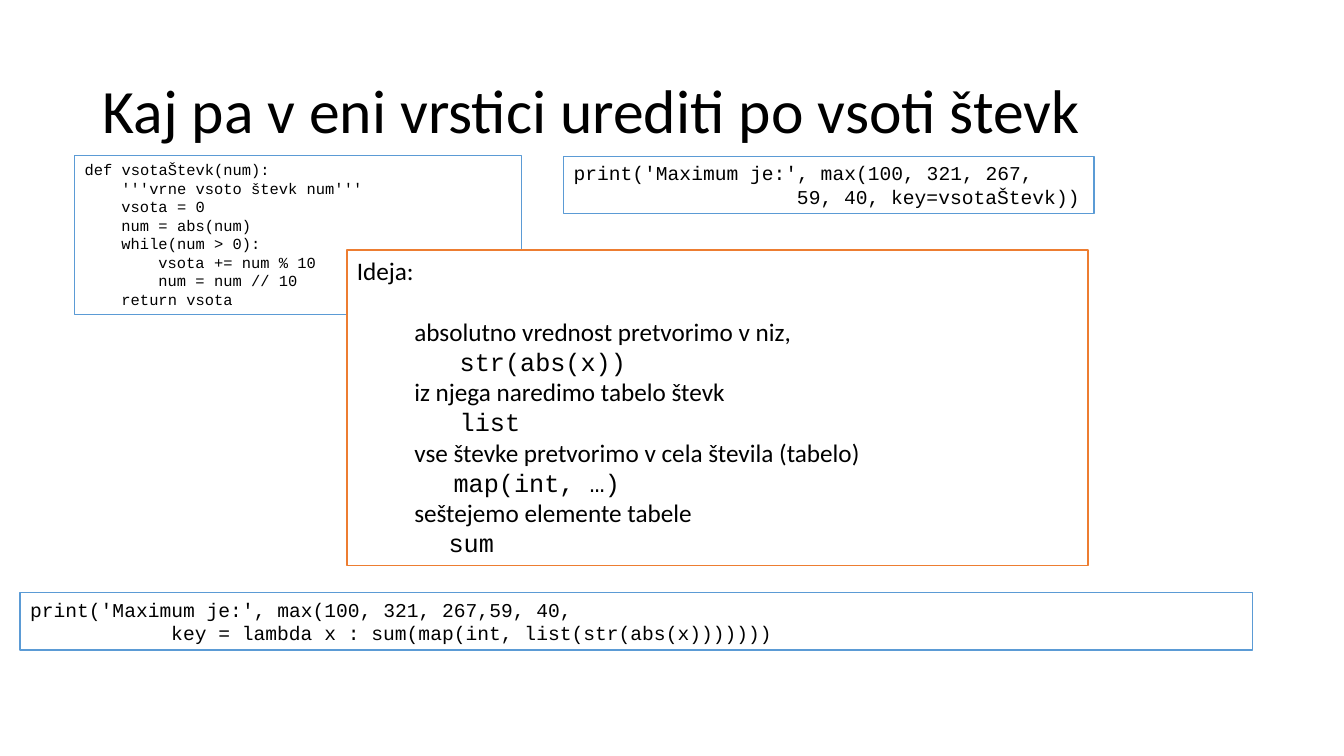
import pptx
import pptx.util
import pptx.dml.color
import pptx.enum.shapes
import pptx.enum.text

Inches = pptx.util.Inches
Pt = pptx.util.Pt
SANS = "Calibri"
MONO = "Courier New"


def color(code):
    return pptx.dml.color.RGBColor.from_string(code)


def write(shape, rows, size, anchor):
    frame = shape.text_frame
    frame.word_wrap = True
    frame.vertical_anchor = anchor
    for i, (indent, font, text) in enumerate(rows):
        para = frame.paragraphs[0] if i == 0 else frame.add_paragraph()
        para.alignment = pptx.enum.text.PP_ALIGN.LEFT
        props = para._p.get_or_add_pPr()
        props.set("marL", str(Inches(indent)))
        props.set("indent", "0")
        run = para.add_run()
        run.text = text
        run.font.name = font
        run.font.size = Pt(size)
        run.font.color.rgb = color("000000")
    return frame


deck = pptx.Presentation()
deck.slide_width = Inches(13.33)
deck.slide_height = Inches(7.5)
slide = deck.slides.add_slide(deck.slide_layouts[6])

title = slide.shapes.add_textbox(Inches(0.92), Inches(0.4), Inches(11.5), Inches(1.45))
head = write(title, [(0, SANS, "Kaj pa v eni vrstici urediti po vsoti števk")], 44,
             pptx.enum.text.MSO_ANCHOR.MIDDLE)
head.paragraphs[0].line_spacing = 0.9

call = [(0, "print('Maximum je:', max(100, 321, 267,"),
        (19, "59, 40, key=vsotaŠtevk))")]
digits = [(0, "def vsotaŠtevk(num):"),
          (4, "'''vrne vsoto števk num'''"),
          (4, "vsota = 0"),
          (4, "num = abs(num)"),
          (4, "while(num > 0):"),
          (8, "vsota += num % 10"),
          (8, "num = num // 10"),
          (4, "return vsota")]
short = [(0, "print('Maximum je:', max(100, 321, 267,59, 40,"),
         (12, "key = lambda x : sum(map(int, list(str(abs(x)))))))")]
idea = [(0, SANS, "Ideja:"),
        (0.57, SANS, "absolutno vrednost pretvorimo v niz,"),
        (1.02, MONO, "str(abs(x))"),
        (0.57, SANS, "iz njega naredimo tabelo števk"),
        (1.02, MONO, "list"),
        (0.57, SANS, "vse števke pretvorimo v cela števila (tabelo)"),
        (0.96, MONO, "map(int, …)"),
        (0.57, SANS, "seštejemo elemente tabele"),
        (0.91, MONO, "sum")]


boxes = [
    ((5.59, 1.55, 5.26, 0.57), "FFFFFF", "5B9BD5", 1, 14, call),
    ((0.74, 1.54, 4.43, 1.58), None, "5B9BD5", 0.75, 11, digits),
    ((0.2, 5.88, 12.22, 0.57), "FFFFFF", "5B9BD5", 1, 14, short),
    ((3.44, 2.48, 7.35, 3.13), "FFFFFF", "ED7D31", 1, 18, idea),
]
for place, fill, line, width, size, rows in boxes:
    box = slide.shapes.add_shape(pptx.enum.shapes.MSO_SHAPE.RECTANGLE,
                                 *[Inches(n) for n in place])
    box.shadow.inherit = False
    if fill:
        box.fill.solid()
        box.fill.fore_color.rgb = color(fill)
    else:
        box.fill.background()
    box.line.color.rgb = color(line)
    box.line.width = Pt(width)
    if rows is not idea:
        step = 0.6 * size / 72
        rows = [(tab * step, MONO, text) for tab, text in rows]
    frame = write(box, rows, size, pptx.enum.text.MSO_ANCHOR.TOP)
    if rows is idea:
        frame.paragraphs[1].space_before = Pt(22)

deck.save("out.pptx")
